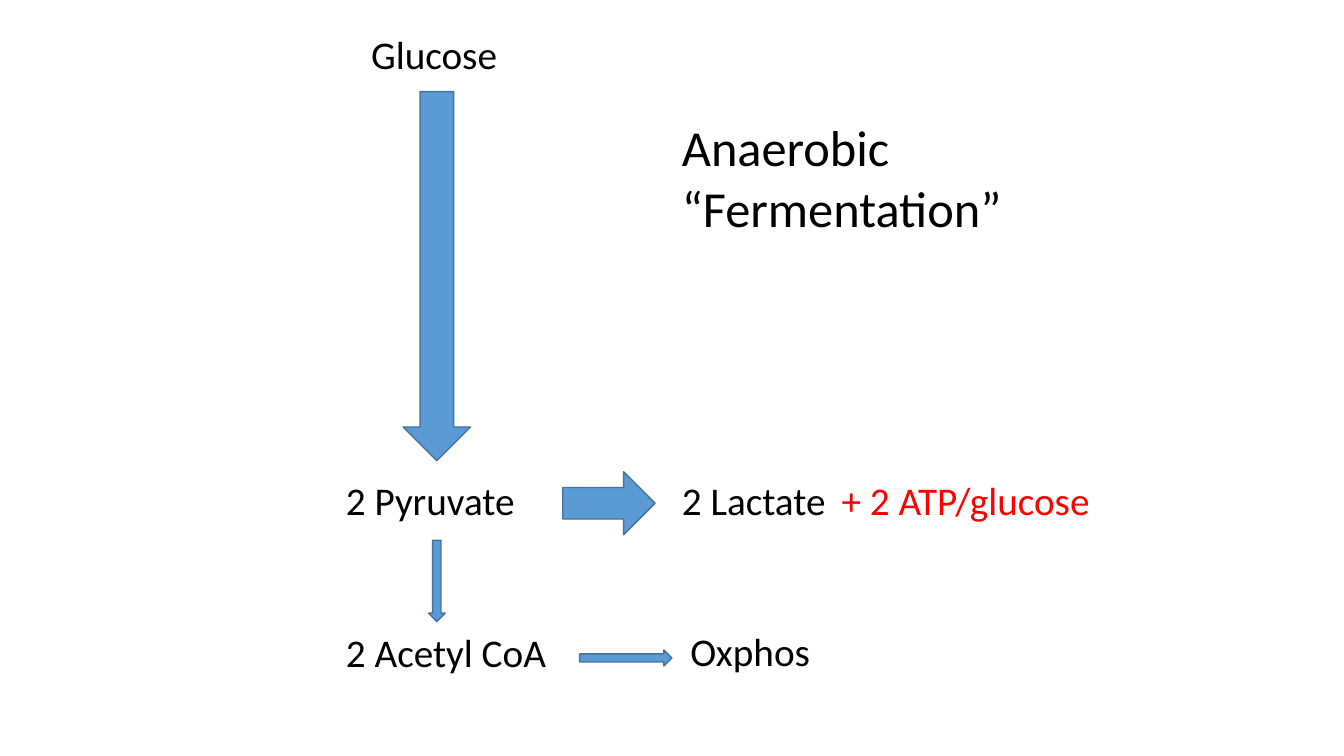
from pptx import Presentation
from pptx.dml.color import RGBColor
from pptx.enum import shapes, text
from pptx.util import Pt

BLACK, RED, BLUE, EDGE = "000000", "FF0000", "5B9BD5", "43739E"
DOWN = shapes.MSO_SHAPE.DOWN_ARROW
RIGHT = shapes.MSO_SHAPE.RIGHT_ARROW

LABEL_WIDTH, LABEL_HEIGHT = 198, 41
LEFT_COLUMN, RIGHT_COLUMN = 240, 480
PYRUVATE_ROW, ACETYL_ROW = 337, 445
PATHWAY_AXIS = 312

labels = [
    ("Glucose", 258, 18, {}),
    ("2 Pyruvate", LEFT_COLUMN, PYRUVATE_ROW, {}),
    ("2 Lactate", RIGHT_COLUMN, PYRUVATE_ROW, {}),
    ("+ 2 ATP/glucose", 594, PYRUVATE_ROW, {"width": 267, "color": RED}),
    ("2 Acetyl CoA", LEFT_COLUMN, ACETYL_ROW, {}),
    ("Oxphos", 486, 444.3, {}),
    ("Anaerobic\n“Fermentation”", RIGHT_COLUMN, 79.5,
     {"width": 270, "height": 94, "size": 36}),
]
down_steps = [(65.5, 48, 263.5), (386, 12, 58)]
right_steps = [(402, 359.5, 45), (414, 470, 11.5)]
RIGHT_LENGTH = 66


def rgb(hex_color):
    return RGBColor.from_string(hex_color)


def add_label(wording, left, top, width=LABEL_WIDTH, height=LABEL_HEIGHT,
              size=28, color=BLACK):
    label = slide.shapes.add_textbox(Pt(left), Pt(top), Pt(width), Pt(height))
    frame = label.text_frame
    frame.word_wrap = True
    frame.auto_size = text.MSO_AUTO_SIZE.SHAPE_TO_FIT_TEXT
    frame.text = wording
    for paragraph in frame.paragraphs:
        font = paragraph.runs[0].font
        font.name, font.size = "Calibri", Pt(size)
        font.color.rgb = rgb(color)


def add_arrow(direction, left, top, width, height):
    arrow = slide.shapes.add_shape(
        direction, Pt(left), Pt(top), Pt(width), Pt(height))
    arrow.shadow.inherit = False
    arrow.fill.solid()
    arrow.fill.fore_color.rgb = rgb(BLUE)
    arrow.line.color.rgb = rgb(EDGE)
    arrow.line.width = Pt(1)


deck = Presentation()
deck.slide_width, deck.slide_height = Pt(960), Pt(540)
slide = deck.slides.add_slide(deck.slide_layouts[6])

for top, width, length in down_steps:
    add_arrow(DOWN, PATHWAY_AXIS - width / 2, top, width, length)
for left, middle, thickness in right_steps:
    add_arrow(RIGHT, left, middle - thickness / 2, RIGHT_LENGTH, thickness)
for wording, left, top, style in labels:
    add_label(wording, left, top, **style)

deck.save("out.pptx")
